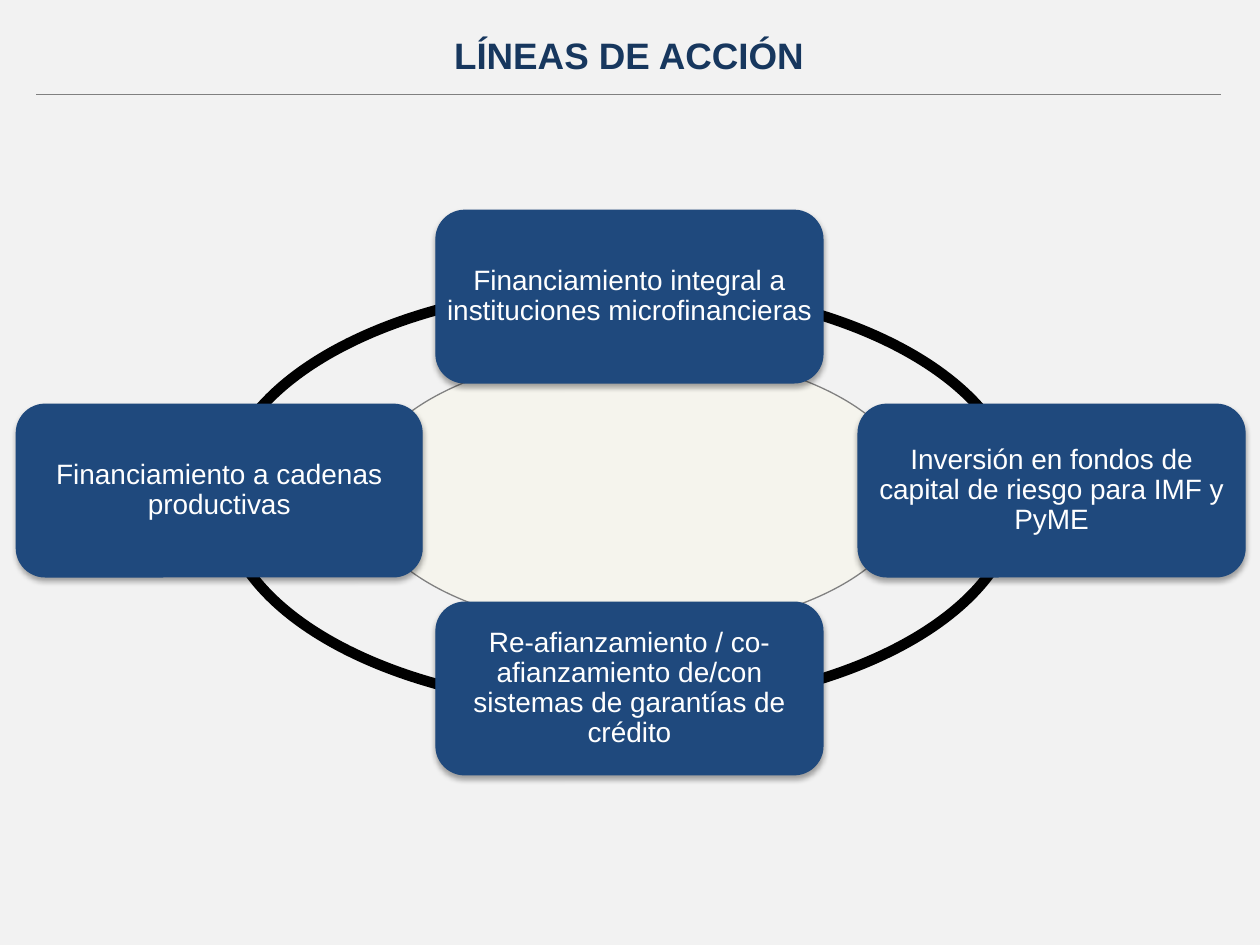
import pptx
import pptx.dml.color
import pptx.enum.shapes
import pptx.enum.text
import pptx.oxml
import pptx.oxml.ns
import pptx.util

Cm = pptx.util.Cm
Pt = pptx.util.Pt
KIND = pptx.enum.shapes.MSO_SHAPE
ALIGN = pptx.enum.text.PP_ALIGN
MIDDLE = pptx.enum.text.MSO_ANCHOR.MIDDLE

HUES = {
    "back": "F2F2F2",
    "title": "17375E",
    "rule": "808080",
    "ring": "000000",
    "core": "F5F4ED",
    "card": "1F497D",
    "text": "FFFFFF",
}
WIDE, HIGH = 7.8, 3.48
MID_X, MID_Y = 12.69, 9.89
CARDS = [
    (MID_X, 5.98, WIDE, "Financiamiento integral a instituciones microfinancieras"),
    (21.2, MID_Y, WIDE, "Inversión en fondos de capital de riesgo para IMF y PyME"),
    (MID_X, 13.88, WIDE,
     "Re-afianzamiento / co-afianzamiento de/con sistemas de garantías de crédito"),
    (4.42, MID_Y, 8.18, "Financiamiento a cadenas productivas"),
]
SHADE = (
    '<a:outerShdw %s blurRad="40000" dist="23000" dir="5400000" rotWithShape="0">'
    '<a:srgbClr val="000000"><a:alpha val="35000"/></a:srgbClr></a:outerShdw>'
    % pptx.oxml.ns.nsdecls("a")
)


def hue(name):
    return pptx.dml.color.RGBColor.from_string(HUES[name])


def add_run(para, text, size, tone, bold=False):
    para.alignment = ALIGN.CENTER
    run = para.add_run()
    run.text = text
    font = run.font
    font.name, font.size, font.bold = "Arial", Pt(size), bold
    font.color.rgb = hue(tone)


def add_form(slide, kind, mid, size, fill, line, width=0.75):
    """Add a preset shape centred on mid; lengths are in centimetres."""
    left, top = (m - s / 2 for m, s in zip(mid, size))
    form = slide.shapes.add_shape(kind, Cm(left), Cm(top), Cm(size[0]), Cm(size[1]))
    form.shadow.inherit = False
    if fill:
        form.fill.solid()
        form.fill.fore_color.rgb = hue(fill)
    else:
        form.fill.background()
    form.line.color.rgb = hue(line)
    form.line.width = Pt(width)
    return form


def add_card(slide, x, y, wide, text):
    card = add_form(slide, KIND.ROUNDED_RECTANGLE, (x, y), (wide, HIGH), "card", "card")
    glow = card._element.spPr.find(pptx.oxml.ns.qn("a:effectLst"))
    glow.append(pptx.oxml.parse_xml(SHADE))
    frame = card.text_frame
    frame.word_wrap = True
    frame.vertical_anchor = MIDDLE
    frame.margin_left = frame.margin_right = Cm(0.05)
    frame.margin_top = frame.margin_bottom = Cm(0.05)
    para = frame.paragraphs[0]
    para.line_spacing = 0.9
    add_run(para, text, 16, "text")


def add_rule(slide):
    rule = slide.shapes.add_connector(
        pptx.enum.shapes.MSO_CONNECTOR.STRAIGHT, Cm(0.73), Cm(1.91), Cm(24.62), Cm(1.91))
    rule.line.color.rgb = hue("rule")
    rule.line.width = Pt(0.75)
    rule._element.spPr.append(pptx.oxml.parse_xml(
        "<a:effectLst %s/>" % pptx.oxml.ns.nsdecls("a")))


def set_title(slide, text):
    title = slide.shapes.title
    title.left, title.top = Cm(2.03), Cm(0.53)
    title.width, title.height = Cm(21.3), Cm(1.14)
    frame = title.text_frame
    frame.auto_size = pptx.enum.text.MSO_AUTO_SIZE.NONE
    frame.vertical_anchor = MIDDLE
    add_run(frame.paragraphs[0], text, 21, "title", bold=True)


def main():
    deck = pptx.Presentation()
    deck.slide_width, deck.slide_height = Cm(25.4), Cm(19.05)
    slide = deck.slides.add_slide(deck.slide_layouts[5])
    slide.background.fill.solid()
    slide.background.fill.fore_color.rgb = hue("back")
    set_title(slide, "LÍNEAS DE ACCIÓN")
    add_rule(slide)
    add_form(slide, KIND.OVAL, (12.5, 10.02), (16, 8.5), None, "ring", 6)
    add_form(slide, KIND.OVAL, (12.84, 9.91), (11.1, 5.64), "core", "rule")
    for card in CARDS:
        add_card(slide, *card)
    deck.save("out.pptx")


if __name__ == "__main__":
    main()
